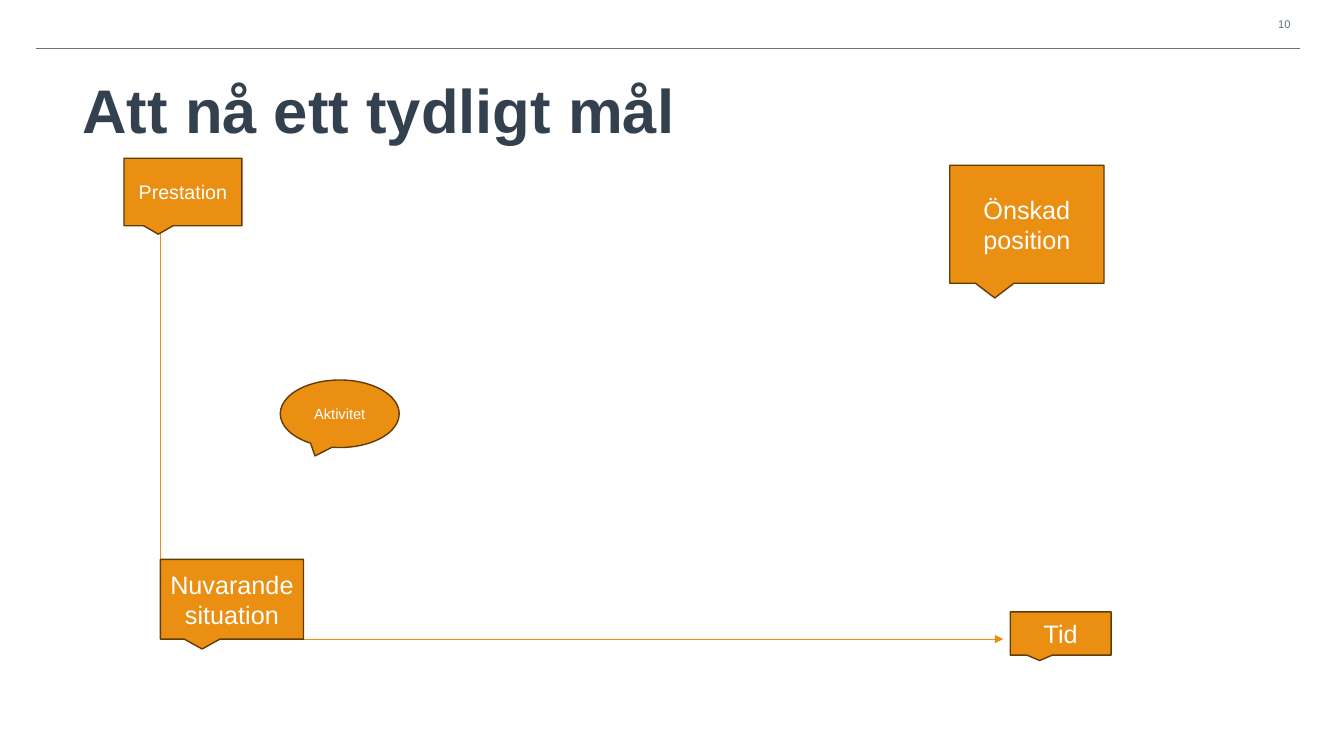
from dataclasses import dataclass

import pptx
import pptx.dml.color
import pptx.enum.shapes
import pptx.enum.text
import pptx.oxml
import pptx.oxml.ns
import pptx.util

Inches = pptx.util.Inches
Pt = pptx.util.Pt
Shape = pptx.enum.shapes.MSO_SHAPE
Align = pptx.enum.text.PP_ALIGN

ORANGE = "EA8F12"
BROWN = "623C07"
SLATE = "61717F"
NAVY = "33414E"
WHITE = "FFFFFF"


@dataclass
class Line:
    start: tuple[float, float]
    end: tuple[float, float]
    color: str
    arrow: bool = True


@dataclass
class Callout:
    text: str
    left: float
    top: float
    width: float
    height: float
    size: float = 18
    kind: Shape = Shape.RECTANGULAR_CALLOUT


LINES = [
    Line((0.36, 0.48), (12.89, 0.48), SLATE, False),
    Line((1.59, 6.34), (1.59, 1.95), ORANGE),
    Line((1.69, 6.34), (9.95, 6.34), ORANGE),
]
CALLOUTS = [
    Callout("Prestation", 1.23, 1.57, 1.17, 0.67, 14),
    Callout("Tid", 10.02, 6.07, 1, 0.43),
    Callout("Nuvarande situation", 1.59, 5.55, 1.42, 0.79),
    Callout("Önskad position", 9.42, 1.64, 1.53, 1.17),
    Callout("Aktivitet", 2.78, 3.77, 1.18, 0.67, 10.5, Shape.OVAL_CALLOUT),
]


def rgb(code: str) -> pptx.dml.color.RGBColor:
    return pptx.dml.color.RGBColor.from_string(code)


def write(shape, text: str, *, size: float, color: str, bold: bool = False,
          align: Align = Align.LEFT, spacing: float = 1.0) -> None:
    frame = shape.text_frame
    frame.word_wrap = True
    frame.vertical_anchor = pptx.enum.text.MSO_ANCHOR.MIDDLE
    para = frame.paragraphs[0]
    para.alignment = align
    para.line_spacing = spacing
    run = para.add_run()
    run.text = text
    run.font.name = "Arial"
    run.font.size = Pt(size)
    run.font.bold = bold
    run.font.color.rgb = rgb(color)


def draw_line(slide, line: Line) -> None:
    points = [Inches(value) for value in line.start + line.end]
    shape = slide.shapes.add_connector(
        pptx.enum.shapes.MSO_CONNECTOR.STRAIGHT, *points)
    shape.line.color.rgb = rgb(line.color)
    shape.line.width = Pt(0.75)
    if line.arrow:
        tail = pptx.oxml.ns.qn("a:tailEnd")
        shape.line._get_or_add_ln().makeelement(tail)
        end = pptx.oxml.parse_xml(
            f'<a:tailEnd {pptx.oxml.ns.nsdecls("a")} type="triangle"/>')
        shape.line._get_or_add_ln().append(end)
    shape._element.spPr.append(pptx.oxml.parse_xml(
        f'<a:effectLst {pptx.oxml.ns.nsdecls("a")}/>'))


def draw_callout(slide, item: Callout) -> None:
    shape = slide.shapes.add_shape(
        item.kind, Inches(item.left), Inches(item.top),
        Inches(item.width), Inches(item.height))
    shape.adjustments[0] = -0.208
    shape.adjustments[1] = 0.625
    shape.shadow.inherit = False
    shape.fill.solid()
    shape.fill.fore_color.rgb = rgb(ORANGE)
    shape.line.color.rgb = rgb(BROWN)
    shape.line.width = Pt(1)
    write(shape, item.text, size=item.size, color=WHITE, align=Align.CENTER)


def main() -> None:
    deck = pptx.Presentation()
    deck.slide_width = Inches(13.33)
    deck.slide_height = Inches(7.5)
    slide = deck.slides.add_slide(deck.slide_layouts[6])

    title = slide.shapes.add_textbox(
        Inches(0.72), Inches(0.4), Inches(11.5), Inches(1.45))
    write(title, "Att nå ett tydligt mål", size=44, color=NAVY, bold=True,
          spacing=0.9)
    number = slide.shapes.add_textbox(
        Inches(12.53), Inches(0.14), Inches(0.37), Inches(0.2))
    write(number, "10", size=8, color=SLATE, align=Align.RIGHT)

    for line in LINES:
        draw_line(slide, line)
    for item in CALLOUTS:
        draw_callout(slide, item)
    deck.save("out.pptx")


if __name__ == "__main__":
    main()
